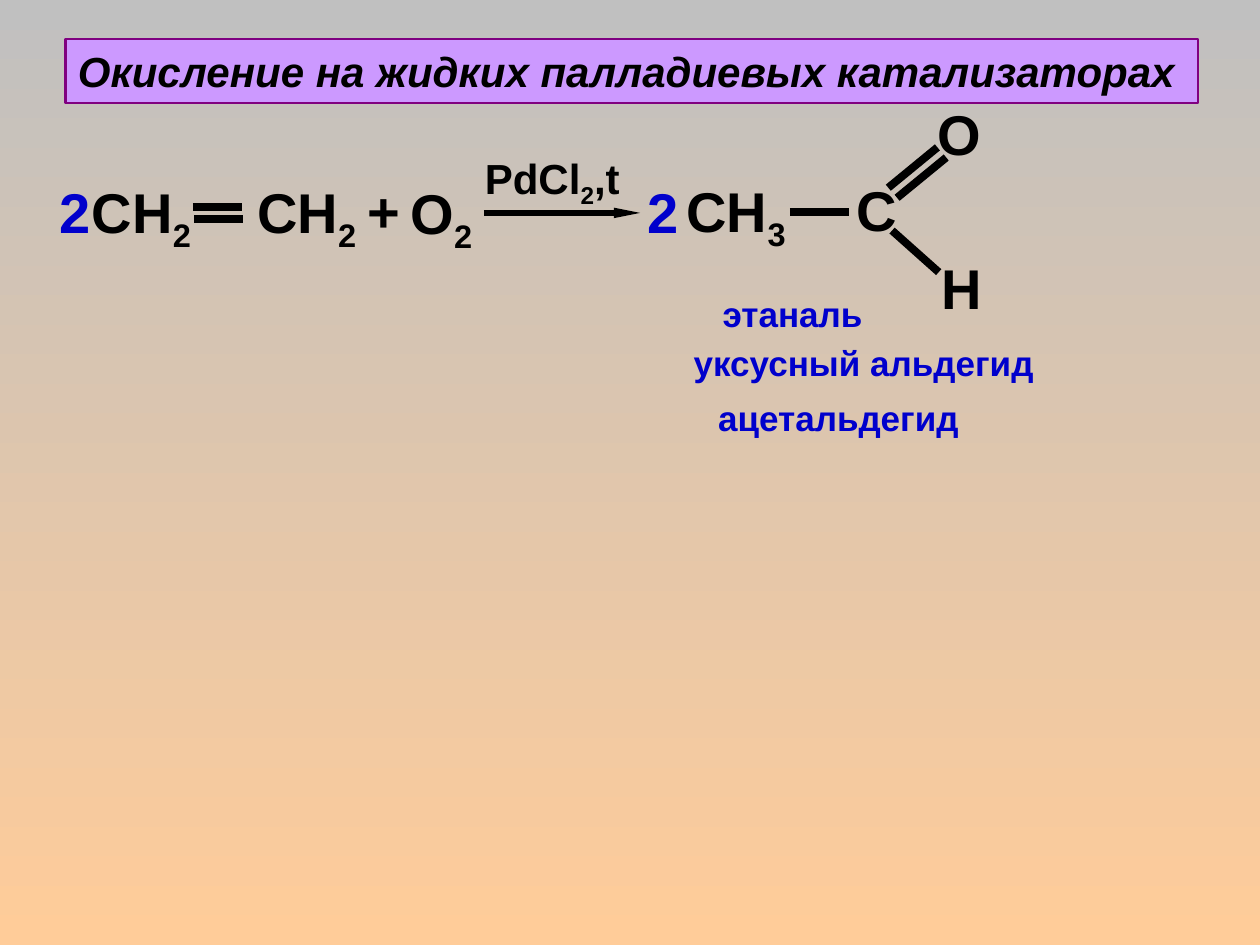
import pptx
import pptx.util
import pptx.dml.color
import pptx.enum.shapes
import pptx.enum.text
import pptx.oxml.xmlchemy

RGBColor = pptx.dml.color.RGBColor
Inches = pptx.util.Inches
Align = pptx.enum.text.PP_ALIGN

BLACK = RGBColor(0x00, 0x00, 0x00)
BLUE = RGBColor(0x00, 0x00, 0xCC)
LILAC = RGBColor(0xCC, 0x99, 0xFF)
PURPLE = RGBColor(0x80, 0x00, 0x80)
GREY = RGBColor(0xC0, 0xC0, 0xC0)
PEACH = RGBColor(0xFF, 0xCC, 0x99)

WIDTH, HEIGHT = 10, 7.5
FONT = "Arial"
LARGE, MEDIUM, SMALL = 32, 24, 20
PADDING = (0.1, 0.05)
NO_PADDING = (0, 0)
ROW = 1.41        # top of unpadded formula text
PADDED_ROW = 1.35  # top of padded formula text

TITLE = "Окисление на жидких палладиевых катализаторах"

# Formula pieces alternate between plain text and subscript.
# Each label: pieces, (left, top, width, height), padding
ETHYLENE = {
    "labels": [
        (("CH", "2"), (0.73, ROW, 0.79, 0.53), NO_PADDING),
        (("CH", "2"), (2.04, ROW, 0.79, 0.53), NO_PADDING),
    ],
    # Each bond: start, end, shift of the second stroke (None if single)
    "bonds": [((1.53, 1.64), (1.92, 1.64), (0.01, 0.1))],
}
ETHANAL = {
    "labels": [
        (("CH", "3"), (5.35, PADDED_ROW, 1.02, 0.64), PADDING),
        (("C",), (6.7, 1.34, 0.48, 0.63), PADDING),
        (("О",), (7.44, 0.79, 0.35, 0.54), NO_PADDING),
        (("Н",), (7.47, 2.01, 0.32, 0.54), NO_PADDING),
    ],
    "bonds": [
        ((6.27, 1.68), (6.74, 1.68), None),
        ((7.05, 1.49), (7.44, 1.17), (0.07, 0.08)),
        ((7.08, 1.83), (7.45, 2.16), None),
    ],
}
# Each: pieces, frame, padding, size, colour
REACTION_LABELS = [
    (("+",), (2.82, PADDED_ROW, 0.52, 0.63), PADDING, LARGE, BLACK),
    (("О", "2"), (3.16, 1.37, 0.72, 0.64), PADDING, LARGE, BLACK),
    (("PdCl", "2", ",t"), (3.75, 1.16, 1.3, 0.51), PADDING, MEDIUM, BLACK),
    (("2",), (0.47, ROW, 0.25, 0.54), NO_PADDING, LARGE, BLUE),
    (("2",), (5.14, ROW, 0.25, 0.54), NO_PADDING, LARGE, BLUE),
]
ARROW = ((3.84, 1.69), (5.08, 1.69))
PRODUCT_NAMES = [
    ("этаналь", (5.63, 2.27, 1.32, 0.44)),
    ("уксусный альдегид", (5.39, 2.66, 2.93, 0.44)),
    ("ацетальдегид", (5.59, 3.1, 2.13, 0.44)),
]


def write(box, pieces, padding, size, color, align=Align.LEFT, italic=None):
    frame = box.text_frame
    frame.word_wrap = False
    frame.auto_size = pptx.enum.text.MSO_AUTO_SIZE.SHAPE_TO_FIT_TEXT
    frame.vertical_anchor = pptx.enum.text.MSO_ANCHOR.TOP
    frame.margin_left = frame.margin_right = Inches(padding[0])
    frame.margin_top = frame.margin_bottom = Inches(padding[1])
    para = frame.paragraphs[0]
    para.alignment = align
    for index, piece in enumerate(pieces):
        span = para.add_run()
        span.text = piece
        span.font.name = FONT
        span.font.size = pptx.util.Pt(size)
        span.font.bold = True
        span.font.italic = italic
        span.font.color.rgb = color
        if index % 2:
            span.font._element.set("baseline", "-25000")


def add_label(shapes, pieces, frame, padding, size=LARGE, color=BLACK,
              align=Align.LEFT):
    box = shapes.add_textbox(*map(Inches, frame))
    write(box, pieces, padding, size, color, align)


def add_line(shapes, start, end, weight):
    line = shapes.add_connector(pptx.enum.shapes.MSO_CONNECTOR.STRAIGHT,
                                *map(Inches, start + end))
    line.line.color.rgb = BLACK
    line.line.width = pptx.util.Pt(weight)
    properties = line._element.spPr
    properties.append(pptx.oxml.xmlchemy.OxmlElement("a:effectLst"))
    return line


def add_molecule(page, molecule):
    group = page.shapes.add_group_shape()
    for label in molecule["labels"]:
        add_label(group.shapes, *label)
    for start, end, shift in molecule["bonds"]:
        for dx, dy in [(0, 0)] + ([shift] if shift else []):
            add_line(group.shapes, (start[0] + dx, start[1] + dy),
                     (end[0] + dx, end[1] + dy), 4.5)


def main():
    deck = pptx.Presentation()
    deck.slide_width, deck.slide_height = Inches(WIDTH), Inches(HEIGHT)
    page = deck.slides.add_slide(deck.slide_layouts[6])

    # Background, shaded from top to bottom
    fill = page.background.fill
    fill.gradient()
    fill.gradient_angle = 270
    for stop, color, position in zip(fill.gradient_stops, (GREY, PEACH), (0, 1)):
        stop.color.rgb = color
        stop.position = position

    # Title bar
    bar = page.shapes.add_shape(pptx.enum.shapes.MSO_SHAPE.RECTANGLE,
                                *map(Inches, (0.52, 0.31, 8.99, 0.51)))
    bar.shadow.inherit = False
    bar.fill.solid()
    bar.fill.fore_color.rgb = LILAC
    bar.line.color.rgb = PURPLE
    bar.line.width = pptx.util.Pt(1.25)
    write(bar, (TITLE,), PADDING, MEDIUM, BLACK, italic=True)

    # Reaction
    add_molecule(page, ETHYLENE)
    for label in REACTION_LABELS:
        add_label(page.shapes, *label)
    arrow = add_line(page.shapes, *ARROW, 3)
    head = pptx.oxml.xmlchemy.OxmlElement("a:tailEnd")
    for key, value in (("type", "triangle"), ("w", "sm"), ("len", "lg")):
        head.set(key, value)
    arrow.line._get_or_add_ln().append(head)
    add_molecule(page, ETHANAL)

    # Names of the product
    for name, frame in PRODUCT_NAMES:
        add_label(page.shapes, (name,), frame, PADDING, SMALL, BLUE, Align.CENTER)

    deck.save("out.pptx")


if __name__ == "__main__":
    main()
